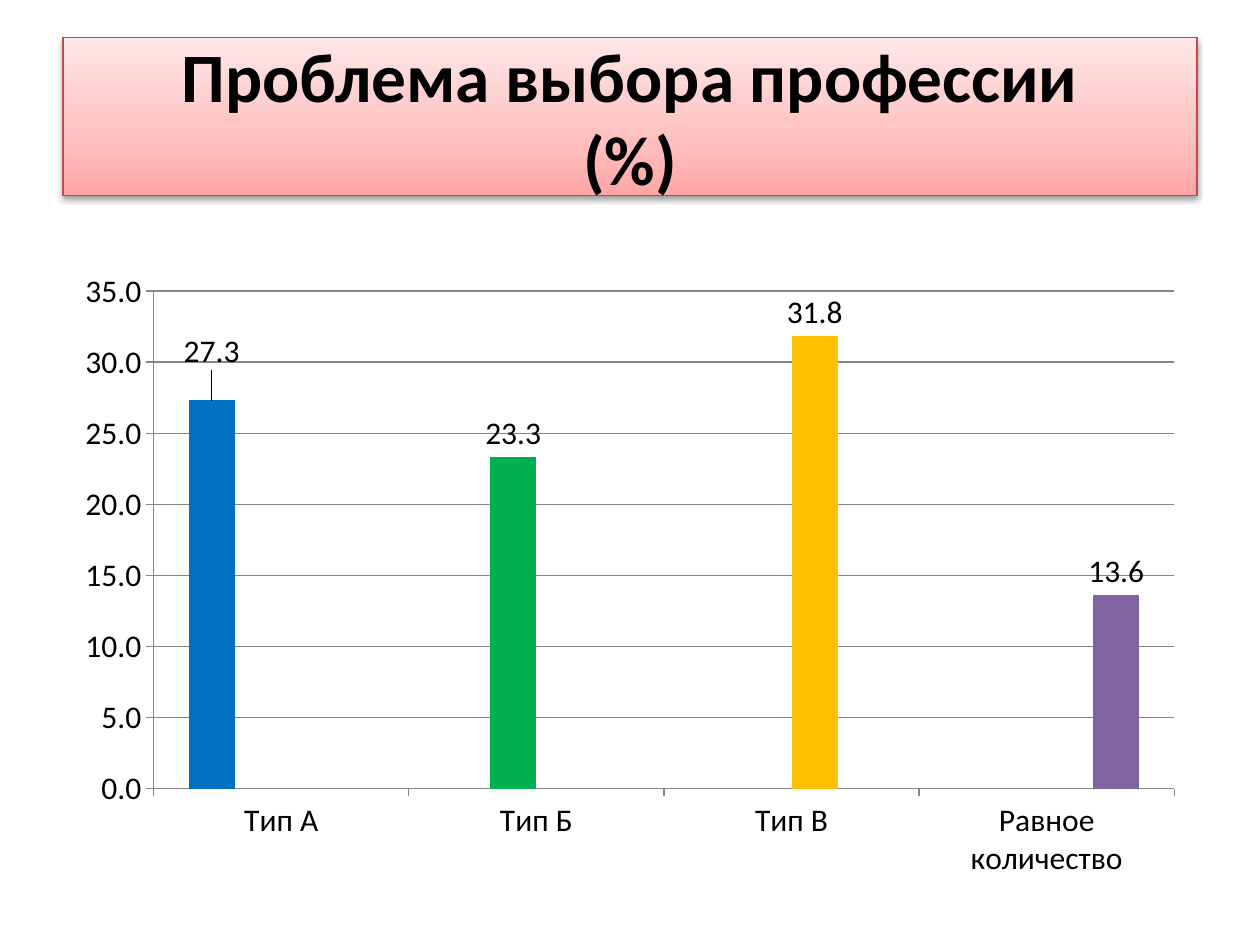
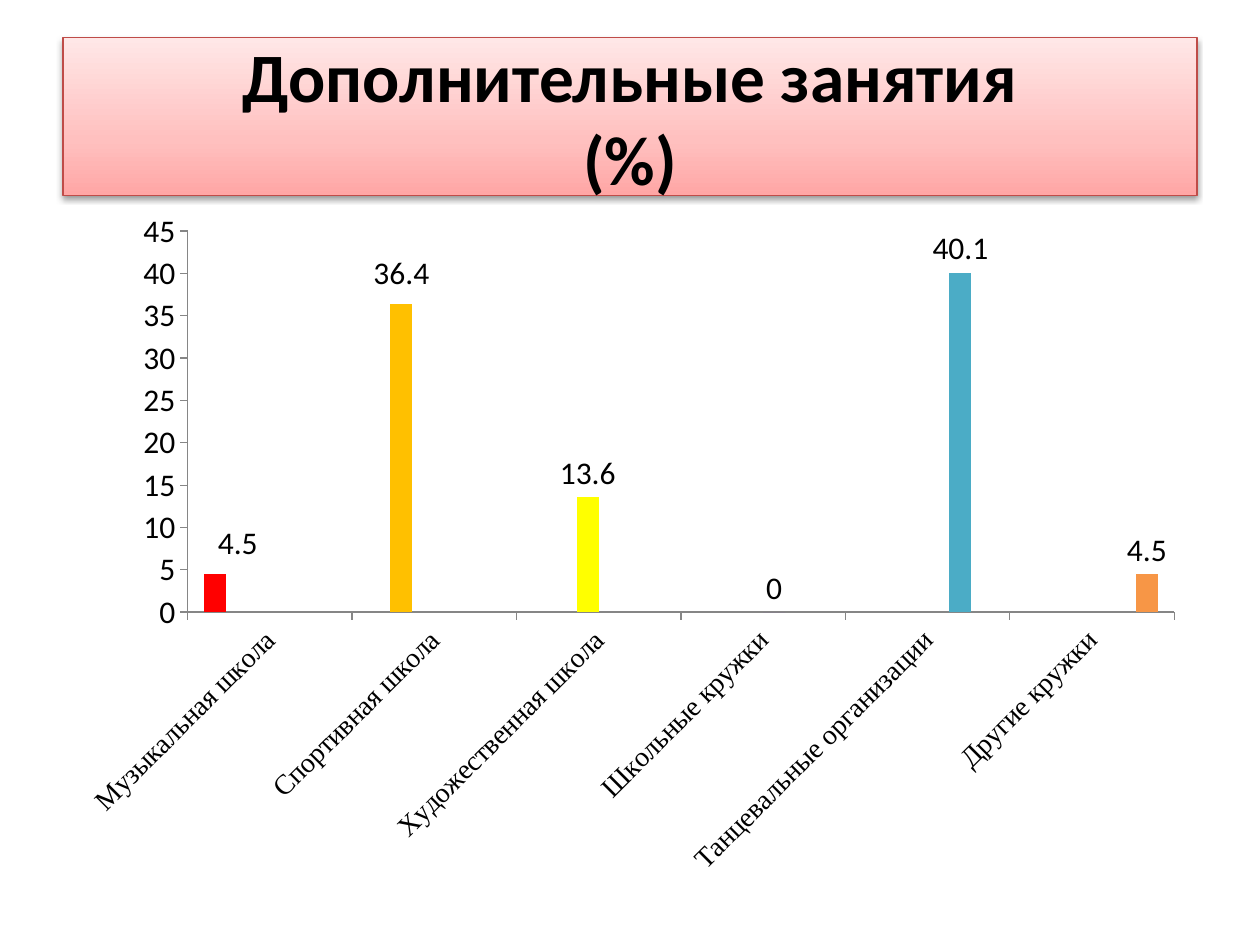
import copy
import dataclasses

import lxml.etree
import pptx
import pptx.chart.data
import pptx.dml.color
import pptx.enum.chart
import pptx.enum.shapes
import pptx.enum.text
import pptx.oxml
import pptx.oxml.ns
import pptx.util

Inches = pptx.util.Inches
Pt = pptx.util.Pt
qn = pptx.oxml.ns.qn


@dataclasses.dataclass(frozen=True)
class Theme:
    """Colours, fonts and sizes that the slides share."""
    font: str = "Calibri"
    category_font: str = "Times New Roman"
    title_size: float = 39.6
    chart_size: int = 18
    small_size: int = 16
    ink: str = "000000"
    axis: str = "868686"
    title_line: str = "BF4C48"
    title_stops: tuple = ((0, "FFA6A5"), (0.35, "FFC0BF"), (1, "FFE7E7"))
    left: float = 0.5
    width: float = 9
    chart_bottom: float = 7.06


THEME = Theme()


@dataclasses.dataclass(frozen=True)
class Survey:
    """One slide: its title, bars as (category, value, colour) and chart options."""
    title: str
    bars: tuple
    top: float
    maximum: int
    plot_area: tuple
    number_format: str = "General"
    gridlines: bool = False
    slanted: bool = False
    label_shifts: dict = dataclasses.field(default_factory=dict)


SURVEYS = (
    Survey(
        title="Проблема выбора профессии",
        bars=(
            ("Тип А", 27.3, "0070C0"),
            ("Тип Б", 23.3, "00B050"),
            ("Тип В", 31.8, "FFC000"),
            ("Равное количество", 13.6, "8064A2"),
        ),
        top=2.06,
        maximum=35,
        plot_area=(0.08, 0.05, 0.9, 0.79),
        number_format="0.0",
        gridlines=True,
        label_shifts={0: (0, -0.04)},
    ),
    Survey(
        title="Дополнительные занятия",
        bars=(
            ("Музыкальная школа", 4.5, "FF0000"),
            ("Спортивная школа", 36.4, "FFC000"),
            ("Художественная школа", 13.6, "FFFF00"),
            ("Школьные кружки", 0, "8064A2"),
            ("Танцевальные организации", 40.1, "4BACC6"),
            ("Другие кружки", 4.5, "F79646"),
        ),
        top=1.56,
        maximum=45,
        plot_area=(0.11, 0.05, 0.87, 0.55),
        slanted=True,
        label_shifts={0: (0.02, -0.01), 1: (0, -0.01)},
    ),
)


def rgb(value):
    """Turn a hex string into a colour."""
    return pptx.dml.color.RGBColor.from_string(value)


def style_font(font, name, size, bold=False):
    """Set the face, size and ink colour of a font."""
    font.name = name
    font.size = Pt(size)
    font.bold = bold
    font.color.rgb = rgb(THEME.ink)


def add_shadow(shape):
    """Give a shape a soft shadow straight below it."""
    shape.shadow.inherit = False
    effects = shape._element.spPr.find(qn("a:effectLst"))
    shadow = lxml.etree.SubElement(
        effects, qn("a:outerShdw"), blurRad=str(Pt(3.1)), dist=str(Pt(1.6)),
        dir="5400000", rotWithShape="0")
    color = lxml.etree.SubElement(shadow, qn("a:srgbClr"), val=THEME.ink)
    lxml.etree.SubElement(color, qn("a:alpha"), val="38000")


def fill_gradient(shape):
    """Fill a shape with the title gradient, running upwards."""
    shape.fill.gradient()
    stop_list = shape._element.spPr.find(".//" + qn("a:gsLst"))
    stop_list.append(copy.deepcopy(stop_list[0]))
    for stop, (position, color) in zip(shape.fill.gradient_stops, THEME.title_stops):
        stop.position = position
        stop.color.rgb = rgb(color)
    shape.fill.gradient_angle = 90


def add_title(page, text):
    """Draw the title band with the percent sign on its second line."""
    box = page.shapes.add_shape(
        pptx.enum.shapes.MSO_SHAPE.RECTANGLE,
        Inches(THEME.left), Inches(0.3), Inches(THEME.width), Inches(1.25))
    fill_gradient(box)
    box.line.color.rgb = rgb(THEME.title_line)
    box.line.width = Pt(0.75)
    add_shadow(box)
    box.text_frame.word_wrap = True
    box.text_frame.vertical_anchor = pptx.enum.text.MSO_ANCHOR.MIDDLE
    para = box.text_frame.paragraphs[0]
    para.text = f"{text}\v(%)"
    para.alignment = pptx.enum.text.PP_ALIGN.CENTER
    style_font(para.font, THEME.font, THEME.title_size, bold=True)


def manual_layout(**settings):
    """Build a chart layout element from its settings, in schema order."""
    layout = pptx.oxml.parse_xml(f"<c:layout {pptx.oxml.ns.nsdecls('c')}><c:manualLayout/></c:layout>")
    for name, value in settings.items():
        lxml.etree.SubElement(layout[0], qn(f"c:{name}"), val=str(value))
    return layout


def place_plot(chart, area):
    """Fix the inner plot area as fractions of the chart."""
    plot_area = chart._chartSpace.chart.plotArea
    for old in plot_area.findall(qn("c:layout")):
        plot_area.remove(old)
    x, y, w, h = area
    plot_area.insert(0, manual_layout(
        layoutTarget="inner", xMode="edge", yMode="edge", x=x, y=y, w=w, h=h))


def style_axes(chart, survey):
    """Set scale, lines, ticks and category lettering."""
    values, categories = chart.value_axis, chart.category_axis
    values.minimum_scale = 0
    values.maximum_scale = survey.maximum
    values.major_unit = 5
    values.tick_labels.number_format = survey.number_format
    values.tick_labels.number_format_is_linked = False
    values.has_major_gridlines = survey.gridlines
    lines = [values.format.line, categories.format.line]
    if survey.gridlines:
        lines.append(values.major_gridlines.format.line)
    for line in lines:
        line.color.rgb = rgb(THEME.axis)
        line.width = Pt(0.75)
    for axis in (values, categories):
        axis.major_tick_mark = pptx.enum.chart.XL_TICK_MARK.OUTSIDE
    if survey.slanted:
        style_font(categories.tick_labels.font, THEME.category_font, THEME.small_size)
        categories._element.find(qn("c:txPr")).find(qn("a:bodyPr")).set("rot", "-2700000")


def style_series(series, index, survey):
    """Colour one series, show its value and shift its label if needed."""
    series.format.fill.solid()
    series.format.fill.fore_color.rgb = rgb(survey.bars[index][2])
    series.invert_if_negative = False
    labels = series.data_labels
    labels.show_value = True
    labels.number_format = survey.number_format
    labels.number_format_is_linked = False
    if index in survey.label_shifts:
        x, y = survey.label_shifts[index]
        label = series.points[index].data_label._get_or_add_dLbl()
        label[0].addnext(manual_layout(x=x, y=y))


def add_survey_chart(page, survey):
    """Draw a column chart in which each category has its own series."""
    data = pptx.chart.data.CategoryChartData(number_format=survey.number_format)
    data.categories = [category for category, _, _ in survey.bars]
    for index, (_, value, _) in enumerate(survey.bars):
        column = [None] * len(survey.bars)
        column[index] = value
        data.add_series(f"Series {index + 1}", column)
    chart = page.shapes.add_chart(
        pptx.enum.chart.XL_CHART_TYPE.COLUMN_CLUSTERED,
        Inches(THEME.left), Inches(survey.top), Inches(THEME.width),
        Inches(THEME.chart_bottom - survey.top), data).chart
    chart.has_legend = False
    chart.has_title = False
    style_font(chart.font, THEME.font, THEME.chart_size)
    plot = chart.plots[0]
    plot.vary_by_categories = False
    plot.gap_width = 150
    place_plot(chart, survey.plot_area)
    style_axes(chart, survey)
    for index, series in enumerate(plot.series):
        style_series(series, index, survey)


def main():
    """Build the deck and save it."""
    deck = pptx.Presentation()
    deck.slide_width = Inches(10)
    deck.slide_height = Inches(7.5)
    for survey in SURVEYS:
        page = deck.slides.add_slide(deck.slide_layouts[6])
        add_title(page, survey.title)
        add_survey_chart(page, survey)
    deck.save("out.pptx")


if __name__ == "__main__":
    main()
